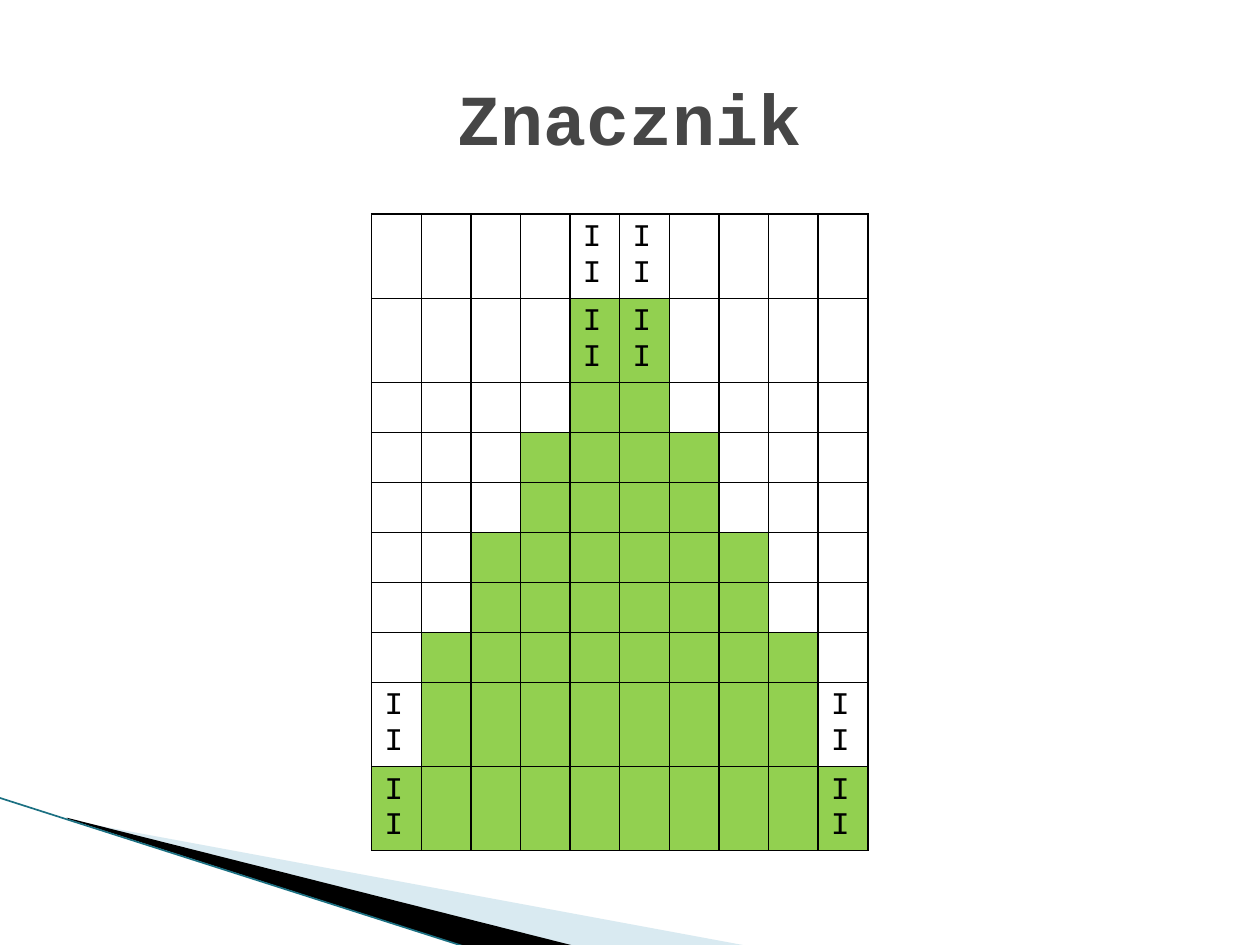
from lxml.etree import SubElement
from pptx import Presentation
from pptx.dml.color import RGBColor
from pptx.enum.shapes import MSO_CONNECTOR
from pptx.enum.text import MSO_ANCHOR, PP_ALIGN
from pptx.oxml.ns import qn
from pptx.util import Inches, Pt

WHITE = RGBColor(0xFF, 0xFF, 0xFF)
BLACK = RGBColor(0x00, 0x00, 0x00)
GREEN = RGBColor(0x92, 0xD0, 0x50)
GRAY = RGBColor(0x46, 0x46, 0x46)
PALE = RGBColor(0xA0, 0xCB, 0xDC)
TEAL = RGBColor(0x1B, 0x70, 0x82)

FONT = "Courier New"
SIDE = 10
REACH = [0, 1, 1, 2, 2, 3, 3, 4, 4, 5]
MARKS = {0: (4, 5), 1: (4, 5), 8: (0, 9), 9: (0, 9)}


def write(frame, text, size=18, color=BLACK, bold=False, align=PP_ALIGN.LEFT):
    para = frame.paragraphs[0]
    para.alignment = align
    run = para.add_run()
    run.text = text
    font = run.font
    font.name, font.size, font.bold = FONT, Pt(size), bold
    font.color.rgb = color


def add_wedge(slide, points, color, alpha=None):
    start, *rest = [(Inches(x), Inches(y)) for x, y in points]
    path = slide.shapes.build_freeform(*start)
    path.add_line_segments(rest)
    shape = path.convert_to_shape()
    shape.shadow.inherit = False
    shape.line.fill.background()
    shape.fill.solid()
    shape.fill.fore_color.rgb = color
    if alpha:
        tint = shape.fill._xPr.find(qn("a:solidFill"))[0]
        SubElement(tint, qn("a:alpha"), val=str(alpha * 1000))


def add_line(slide, start, end, color, width):
    points = [Inches(n) for n in start + end]
    line = slide.shapes.add_connector(MSO_CONNECTOR.STRAIGHT, *points)
    line.line.color.rgb = color
    line.line.width = Pt(width)
    SubElement(line._element.spPr, qn("a:effectLst"))


def set_edges(cell, color, width):
    props = cell._tc.get_or_add_tcPr()
    for side in ("lnL", "lnR", "lnT", "lnB"):
        edge = SubElement(props, qn(f"a:{side}"), w=str(Pt(width)))
        fill = SubElement(edge, qn("a:solidFill"))
        SubElement(fill, qn("a:srgbClr"), val=str(color))


def add_grid(slide):
    table = slide.shapes.add_table(
        SIDE, SIDE, Inches(2.95), Inches(1.7), Inches(3.94), Inches(3.97)
    ).table
    table.first_row = table.horz_banding = False
    for row, reach in enumerate(REACH):
        for col in range(SIDE):
            cell = table.cell(row, col)
            set_edges(cell, BLACK, 1)
            inside = SIDE // 2 - reach <= col < SIDE // 2 + reach
            cell.fill.solid()
            cell.fill.fore_color.rgb = GREEN if inside else WHITE
            write(cell.text_frame, "II" if col in MARKS.get(row, ()) else "")


def set_title(slide, text):
    title = slide.shapes.title
    title.left, title.top = Inches(0.5), Inches(0.3)
    title.width, title.height = Inches(9), Inches(1.25)
    title.text_frame.vertical_anchor = MSO_ANCHOR.MIDDLE
    write(title.text_frame, text, size=41, color=GRAY, bold=True,
          align=PP_ALIGN.CENTER)


def main():
    deck = Presentation()
    deck.slide_width, deck.slide_height = Inches(10), Inches(7.5)
    slide = deck.slides.add_slide(deck.slide_layouts[5])
    add_wedge(slide, [(0.55, 6.51), (5.95, 7.51), (4.56, 7.51), (0.55, 6.5)],
              PALE, alpha=40)
    add_wedge(slide, [(0.53, 6.49), (4.57, 7.51), (3.72, 7.52), (0.54, 6.5)],
              BLACK)
    add_line(slide, (-0.01, 6.33), (3.71, 7.52), TEAL, 0.95)
    add_grid(slide)
    set_title(slide, "Znacznik")
    deck.save("out.pptx")


if __name__ == "__main__":
    main()
